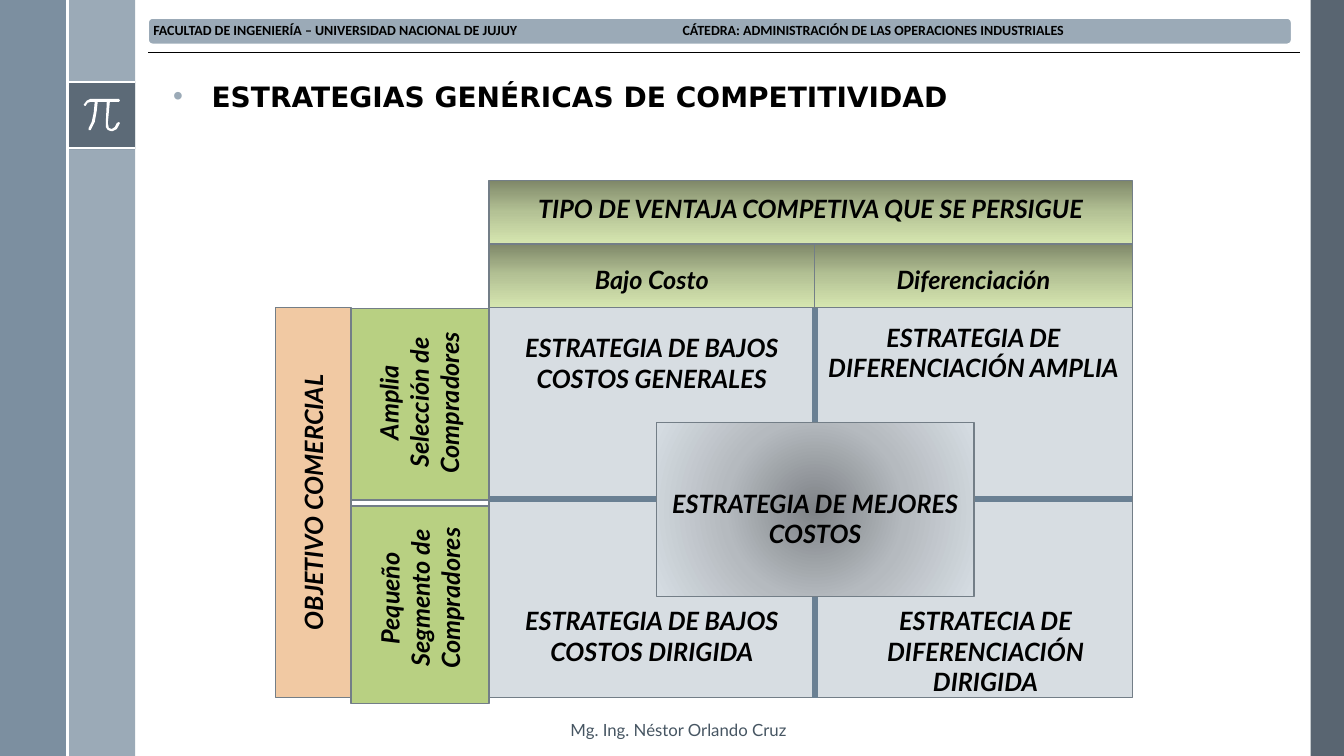
from lxml import etree
from pptx import Presentation
from pptx.dml.color import RGBColor
from pptx.enum.shapes import MSO_CONNECTOR, MSO_SHAPE
from pptx.enum.text import MSO_ANCHOR, MSO_AUTO_SIZE, PP_ALIGN
from pptx.oxml.ns import qn
from pptx.util import Emu, Pt

RECTANGLE, ROUNDED = MSO_SHAPE.RECTANGLE, MSO_SHAPE.ROUNDED_RECTANGLE
STRAIGHT = MSO_CONNECTOR.STRAIGHT
TOP, MIDDLE = MSO_ANCHOR.TOP, MSO_ANCHOR.MIDDLE
LEFT, CENTER = PP_ALIGN.LEFT, PP_ALIGN.CENTER
GROW = MSO_AUTO_SIZE.SHAPE_TO_FIT_TEXT
PX = 9144

BLACK, WHITE = "000000", "FFFFFF"
STEEL, MIST, SLATE = "6A8093", "9BAAB7", "475562"
EDGE, CELL, LIME, PEACH = "737E87", "D7DDE2", "B8D082", "F1C9A3"
GREEN_FADE = ("7F8869", "B4C295", "D6E6B0")
GRAY_FADE = ("7F8387", "B5BABF", "D6DDE3")
PI_OUTLINE = [
    (118, 98), (90, 98), (86, 100), (83, 104), (84, 105), (85, 105), (87, 102),
    (90, 101), (94, 101), (93, 112), (91, 121), (88, 127), (88, 129), (90, 129),
    (94, 121), (96, 110), (97, 101), (106, 101), (105, 122), (105, 126),
    (107, 129), (110, 130), (112, 130), (116, 128), (119, 122), (118, 121),
    (116, 122), (114, 126), (111, 128), (108, 127), (107, 122), (109, 101),
    (118, 101), (119, 100),
]


def color(code):
    return RGBColor.from_string(code)


def child(parent, tag, **attributes):
    return etree.SubElement(parent, qn(tag), attributes)


class Sheet:
    """Draws styled elements on the current slide, with lengths in px."""

    def __init__(self, width, height):
        self.deck = Presentation()
        self.deck.slide_width, self.deck.slide_height = Emu(width * PX), Emu(height * PX)
        self.page = self.deck.slides.add_slide(self.deck.slide_layouts[6])
        self.shapes = self.page.shapes
        self.font = "Lato"

    def frame(self, *lengths):
        return [Emu(length * PX) for length in lengths]

    def paint(self, shape, fill, edge=None, opacity=100):
        shape.shadow.inherit = False
        shape.fill.solid()
        shape.fill.fore_color.rgb = color(fill)
        if opacity < 100:
            code = shape._element.spPr.find(qn("a:solidFill"))[0]
            child(code, "a:alpha", val=str(opacity * 1000))
        self.outline(shape, edge)

    def outline(self, shape, edge):
        if edge:
            shape.line.color.rgb = color(edge)
            shape.line.width = Pt(1)
        else:
            shape.line.fill.background()

    def block(self, place, fill, edge=EDGE, opacity=100, kind=RECTANGLE):
        shape = self.shapes.add_shape(kind, *self.frame(*place))
        self.paint(shape, fill, edge, opacity)
        return shape

    def fade(self, place, codes, radial=False):
        shape = self.shapes.add_shape(RECTANGLE, *self.frame(*place))
        shape.shadow.inherit = False
        self.outline(shape, EDGE)
        gradient = etree.Element(qn("a:gradFill"), rotWithShape="1")
        stops = child(gradient, "a:gsLst")
        for index, code in enumerate(codes):
            stop = child(stops, "a:gs", pos=str(index * 50000))
            child(stop, "a:srgbClr", val=code)
        if radial:
            center = child(gradient, "a:path", path="circle")
            child(center, "a:fillToRect", l="50000", t="50000", r="50000", b="50000")
        else:
            child(gradient, "a:lin", ang="5400000", scaled="0")
        shape._element.spPr.find(qn("a:prstGeom")).addnext(gradient)

    def rule(self, ends, code, weight):
        line = self.shapes.add_connector(STRAIGHT, *self.frame(*ends))
        line.line.color.rgb = color(code)
        line.line.width = Pt(weight)
        child(line._element.spPr, "a:effectLst")

    def polygon(self, points, fill):
        builder = self.shapes.build_freeform(*points[0], scale=PX)
        builder.add_line_segments(points[1:], close=True)
        self.paint(builder.convert_to_shape(), fill)

    def put_text(self, box, text, size=18, font=None, code=BLACK, bold=True,
                 italic=True, align=CENTER, anchor=TOP):
        frame = box.text_frame
        frame.word_wrap = True
        frame.vertical_anchor = anchor
        para = frame.paragraphs[0]
        para.alignment = align
        span = para.add_run()
        span.text = text
        span.font.size, span.font.name = Pt(size), font or self.font
        span.font.bold, span.font.italic = bold, italic
        span.font.color.rgb = color(code)
        return para

    def label(self, place, text, turn=0, **style):
        box = self.shapes.add_textbox(*self.frame(*place))
        box.rotation = turn
        self.put_text(box, text, **style)
        box.text_frame.auto_size = GROW

    def heading(self, place, text):
        box = self.shapes.add_textbox(*self.frame(*place))
        para = self.put_text(box, text, 20, "DejaVu Sans", italic=False, align=LEFT)
        para.space_before = Pt(10)
        properties = para._p.get_or_add_pPr()
        properties.set("marL", str(38 * PX))
        properties.set("indent", str(-38 * PX))
        child(child(properties, "a:buClr"), "a:srgbClr", val=MIST)
        child(properties, "a:buFont", typeface="Arial")
        child(properties, "a:buChar", char="•")

    def banner(self, place, text, stop):
        box = self.shapes.add_textbox(*self.frame(*place))
        para = self.put_text(box, text, 10, "Calibri", italic=False, align=LEFT, anchor=MIDDLE)
        para.line_spacing = 0.9
        frame = box.text_frame
        frame.margin_left = frame.margin_right = Emu(4 * PX)
        frame.margin_top = frame.margin_bottom = Emu(4 * PX)
        tabs = child(para._p.get_or_add_pPr(), "a:tabLst")
        child(tabs, "a:tab", pos=str(stop * PX), algn="l")


def main():
    sheet = Sheet(1333, 750)

    sheet.block((1300, 0, 33, 750), SLATE, None, 90)
    sheet.block((67, 0, 67, 750), MIST, None)
    sheet.block((0, 0, 67, 750), STEEL, None, 88)
    sheet.block((67, 81, 67, 67), SLATE, None, 75)
    for ends in ((67, 81, 134, 81), (67, 147, 134, 147), (67, 0, 67, 750)):
        sheet.rule(ends, WHITE, 1.5)
    sheet.polygon(PI_OUTLINE, WHITE)

    sheet.label((556, 709, 323, 30), "Mg. Ing. Néstor Orlando Cruz", size=12,
                code="465562", bold=False, italic=False, align=LEFT)
    sheet.block((147, 18, 1134, 26), MIST, WHITE, kind=ROUNDED)
    sheet.banner((148, 19, 1131, 24),
                 "FACULTAD DE INGENIERÍA – UNIVERSIDAD NACIONAL DE JUJUY\t"
                 "CÁTEDRA: ADMINISTRACIÓN DE LAS OPERACIONES INDUSTRIALES", 525)
    sheet.rule((147, 52, 1289, 52), BLACK, 0.5)
    sheet.heading((162, 74, 1120, 75), "ESTRATEGIAS GENÉRICAS DE COMPETITIVIDAD")

    sheet.block((485, 305, 638, 387), CELL)
    sheet.rule((485, 495, 1123, 495), STEEL, 4.5)
    sheet.rule((808, 305, 808, 692), STEEL, 4.5)

    for left, width, text in ((485, 323, "Bajo Costo"), (808, 315, "Diferenciación")):
        sheet.fade((left, 242, width, 63), GREEN_FADE)
        sheet.label((left, 257, width, 40), text)
    sheet.fade((485, 179, 638, 63), GREEN_FADE)
    sheet.label((485, 187, 638, 40), "TIPO DE VENTAJA COMPETIVA QUE SE PERSIGUE")

    for top, height, text_place, text in (
        (306, 190, (321, 349, 190, 101), "Amplia Selección de Compradores"),
        (502, 196, (319, 543, 196, 101), "Pequeño Segmento de Compradores"),
    ):
        sheet.block((348, top, 137, height), LIME)
        sheet.label(text_place, text, turn=270)
    goal = sheet.block((273, 305, 75, 387), PEACH)
    sheet.put_text(goal, "OBJETIVO COMERCIAL", anchor=MIDDLE)
    goal.text_frame._txBody.bodyPr.set("vert", "vert270")

    for left, top, width, text in (
        (485, 325, 323, "ESTRATEGIA DE BAJOS COSTOS GENERALES"),
        (808, 315, 315, "ESTRATEGIA DE DIFERENCIACIÓN AMPLIA"),
        (485, 596, 323, "ESTRATEGIA DE BAJOS COSTOS DIRIGIDA"),
        (816, 596, 323, "ESTRATECIA DE DIFERENCIACIÓN DIRIGIDA"),
    ):
        sheet.label((left, top, width, 71), text)
    sheet.fade((651, 419, 315, 173), GRAY_FADE, radial=True)
    sheet.label((651, 479, 315, 71), "ESTRATEGIA DE MEJORES COSTOS")

    sheet.deck.save("out.pptx")


if __name__ == "__main__":
    main()
